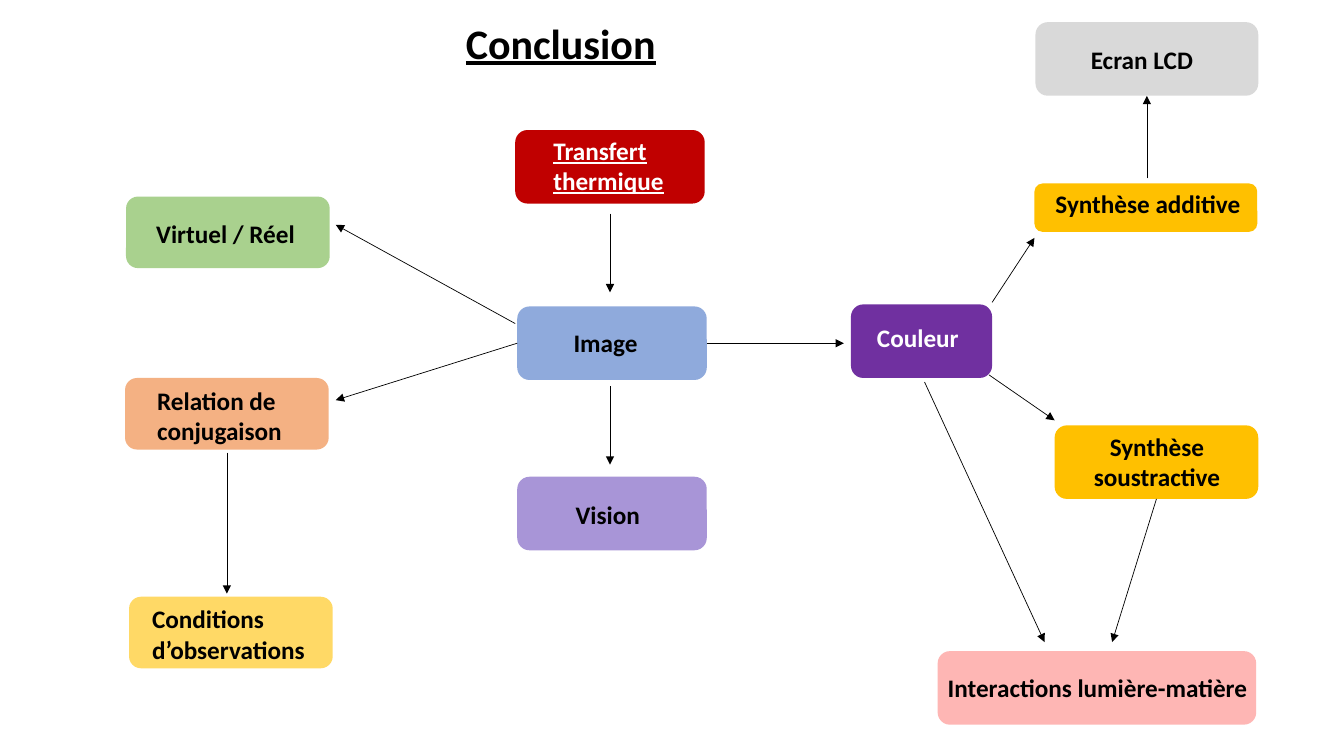
from lxml import etree
from pptx import Presentation
from pptx.dml.color import RGBColor as RGB
from pptx.enum.shapes import MSO_CONNECTOR as Line, MSO_SHAPE as Shape
from pptx.enum.text import MSO_ANCHOR as Anchor, MSO_AUTO_SIZE as Fit, PP_ALIGN as Align
from pptx.oxml.ns import qn
from pptx.util import Inches, Pt

BLACK = RGB(0x00, 0x00, 0x00)
WHITE = RGB(0xFF, 0xFF, 0xFF)
PURPLE = RGB(0x70, 0x30, 0xA0)
RED = RGB(0xC0, 0x00, 0x00)
BLUE = RGB(0x8F, 0xAA, 0xDC)
GREY = RGB(0xD9, 0xD9, 0xD9)
GREEN = RGB(0xA9, 0xD1, 0x8E)
PINK = RGB(0xFE, 0xB6, 0xB4)
AMBER = RGB(0xFF, 0xC0, 0x00)
ORANGE = RGB(0xF4, 0xB1, 0x83)
LILAC = RGB(0xA8, 0x95, 0xD7)
YELLOW = RGB(0xFF, 0xD9, 0x66)

# Connection sites
LEFT, BOTTOM, RIGHT = 1, 2, 3


class Map:
    """Concept map on a grid of ten columns and rows to the inch."""
    font = "Calibri"
    step = Inches(0.1)

    def __init__(self, deck):
        self.slide = deck.slides.add_slide(deck.slide_layouts[5])
        self.shapes = self.slide.shapes

    def grid(self, *cells):
        return [round(cell * self.step) for cell in cells]

    def letter(self, box, text, size, ink=BLACK, under=False, align=Align.LEFT):
        frame = box.text_frame
        frame.text = text
        frame.word_wrap = True
        frame.auto_size = Fit.NONE
        frame.vertical_anchor = Anchor.TOP
        para = frame.paragraphs[0]
        para.alignment = align
        font = para.runs[0].font
        font.name, font.size, font.bold = self.font, Pt(size), True
        font.underline = under
        font.color.rgb = ink

    def title(self, text, *area):
        box = self.shapes.title
        box.left, box.top, box.width, box.height = self.grid(*area)
        self.letter(box, text, 30, under=True)

    def node(self, fill, area, text, spot, **style):
        box = self.shapes.add_shape(Shape.ROUNDED_RECTANGLE, *self.grid(*area))
        box.shadow.inherit = False
        box.fill.solid()
        box.fill.fore_color.rgb = fill
        box.line.fill.background()
        label = self.shapes.add_textbox(*self.grid(*spot))
        self.letter(label, text, 18, **style)
        return box

    def arrow(self, start, end, tail=None, head=None):
        """Draw an arrow; tail and head are (node, site) pairs to join."""
        line = self.shapes.add_connector(Line.STRAIGHT, *self.grid(*start, *end))
        if tail:
            line.begin_connect(*tail)
        if head:
            line.end_connect(*head)
        line.line.color.rgb = BLACK
        line.line.width = Pt(0.5)
        props = line._element.spPr
        etree.SubElement(props.find(qn("a:ln")), qn("a:tailEnd"), type="triangle")
        etree.SubElement(props, qn("a:effectLst"))


def main():
    deck = Presentation()
    deck.slide_width, deck.slide_height = Inches(13.33), Inches(7.5)
    chart = Map(deck)
    node, arrow = chart.node, chart.arrow
    chart.title("Conclusion", 45.2, 1.2, 41.2, 6.1)

    # Centre column
    mid, wide, tall = 51.3, 18.8, 7.3
    node(RED, (51.1, 12.9, wide, tall), "Transfert thermique",
         (53.9, 12.9, 16, 7.1), ink=WHITE, under=True)
    image = node(BLUE, (mid, 30.4, wide, tall), "Image", (55.9, 32, 14, 4))
    node(LILAC, (mid, 47.3, wide, tall), "Vision", (56.1, 49, 14, 4))
    for top in (21.2, 38.3):
        arrow((60.5, top), (60.5, top + 7.8))

    # Left branch
    side, low = 20.2, 7.1
    node(GREEN, (12.5, 19.5, side, low), "Virtuel / Réel", (14.5, 21.2, side, 4))
    node(ORANGE, (12.4, 37.5, side, low), "Relation de conjugaison",
         (14.6, 37.7, 18.9, low))
    node(YELLOW, (12.8, 59.2, side, low), "Conditions d’observations",
         (14.1, 59.4, 18.9, low))
    arrow((51.1, 32.1), (33.3, 22.3))
    arrow((51.3, 34), (33.3, 39.7), tail=(image, LEFT))
    arrow((22.5, 44.9), (22.5, 58.9))

    # Colour branch
    node(PURPLE, (84.4, 30.2, 14, tall), "Couleur", (86, 31.5, 14, 4), ink=WHITE)
    screen = node(GREY, (102.7, 2.2, 22.1, tall), "Ecran LCD", (107.2, 3.9, 19.8, 4))
    node(AMBER, (102.6, 18.2, 22.1, 4.8), "Synthèse additive", (103.7, 18.2, 22.1, 4))
    minus = node(AMBER, (104.6, 42.2, side, tall), "Synthèse soustractive",
                 (103.7, 42.3, 22.1, 7.1), align=Align.CENTER)
    node(PINK, (93, 64.6, 31.6, tall), "Interactions lumière-matière",
         (93, 66.2, 35.1, 4))
    arrow((70.2, 34.05), (83.7, 34.05), tail=(image, RIGHT))
    arrow((98.4, 30), (102.6, 23.6))
    arrow((113.75, 17.7), (113.75, 9.6), head=(screen, BOTTOM))
    arrow((98.1, 37.2), (104.6, 41.7))
    arrow((91.7, 37.9), (103.6, 63.7))
    arrow((115.1, 49.5), (110.3, 63.7), tail=(minus, BOTTOM))

    deck.save("out.pptx")


if __name__ == "__main__":
    main()
